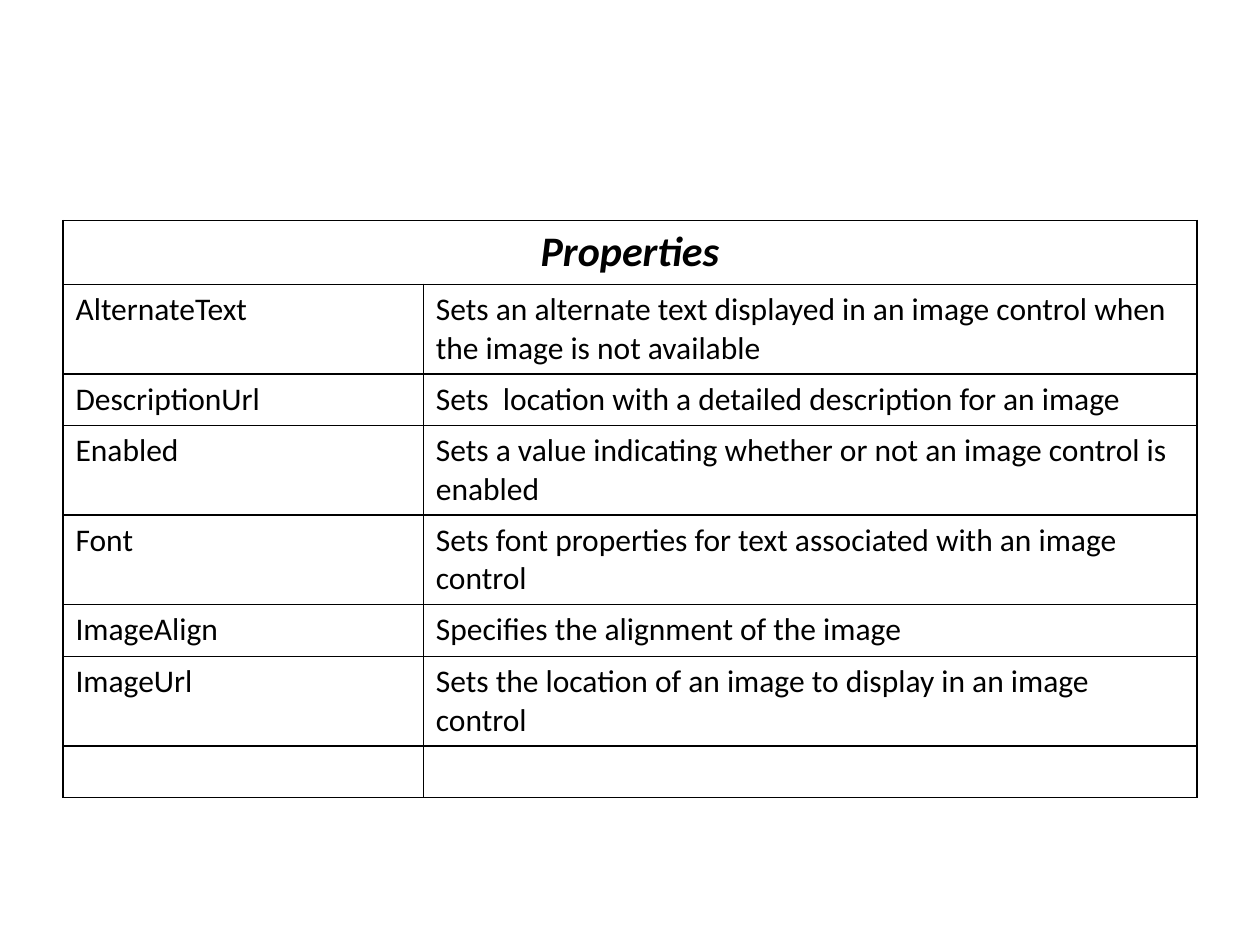
"""Build a slide with a table of image control properties."""
from dataclasses import dataclass
from typing import NamedTuple

from lxml import etree
from pptx import Presentation
from pptx.dml.color import RGBColor
from pptx.enum.text import PP_ALIGN
from pptx.oxml.ns import qn
from pptx.util import Inches, Pt

LEFT, CENTER = PP_ALIGN.LEFT, PP_ALIGN.CENTER


@dataclass(frozen=True)
class Theme:
    """Colours, font and sizes of the slide."""
    font: str = "Calibri"
    ink: str = "000000"
    paper: str = "FFFFFF"
    heading_size: int = 24
    body_size: int = 18
    border_width: int = 1


class Property(NamedTuple):
    """A control property and its purpose."""
    name: str
    purpose: str


THEME = Theme()
SLIDE_WIDTH, SLIDE_HEIGHT = Inches(10), Inches(7.5)
MARGIN = Inches(0.5)
TABLE_TOP = Inches(1.75)
ROW_HEIGHT = Inches(0.41)
NAME_WIDTH = Inches(2.86)
HEADING = "Properties"
PROPERTIES = [
    Property("AlternateText", "Sets an alternate text displayed in an image control when the image is not available"),
    Property("DescriptionUrl", "Sets  location with a detailed description for an image"),
    Property("Enabled", "Sets a value indicating whether or not an image control is enabled"),
    Property("Font", "Sets font properties for text associated with an image control"),
    Property("ImageAlign", "Specifies the alignment of the image"),
    Property("ImageUrl", "Sets the location of an image to display in an image control"),
    Property("", ""),
]


def style_cell(cell) -> None:
    """Give a cell four solid borders and a plain fill."""
    properties = cell._tc.get_or_add_tcPr()
    for side in ("lnL", "lnR", "lnT", "lnB"):
        line = etree.SubElement(properties, qn(f"a:{side}"), w=str(Pt(THEME.border_width)))
        fill = etree.SubElement(line, qn("a:solidFill"))
        etree.SubElement(fill, qn("a:srgbClr"), val=THEME.ink)
    cell.fill.solid()
    cell.fill.fore_color.rgb = RGBColor.from_string(THEME.paper)


def write_cell(cell, text: str, heading: bool = False) -> None:
    """Write formatted text into a cell."""
    cell.text_frame.text = text
    paragraph = cell.text_frame.paragraphs[0]
    paragraph.alignment = CENTER if heading else LEFT
    font = paragraph.font
    if paragraph.runs:
        font = paragraph.runs[0].font
    font.name = THEME.font
    font.size = Pt(THEME.heading_size if heading else THEME.body_size)
    font.bold = font.italic = heading
    font.color.rgb = RGBColor.from_string(THEME.ink)


def add_property_table(page, properties: list[Property]) -> None:
    """Add the table with a merged heading and one row per property."""
    row_count = len(properties) + 1
    width = SLIDE_WIDTH - 2 * MARGIN
    table = page.shapes.add_table(
        row_count, 2, MARGIN, TABLE_TOP, width, ROW_HEIGHT * row_count
    ).table
    table.first_row = table.horz_banding = False
    table.columns[0].width = NAME_WIDTH
    table.columns[1].width = width - NAME_WIDTH
    for cell in table.iter_cells():
        style_cell(cell)
    table.cell(0, 0).merge(table.cell(0, 1))
    write_cell(table.cell(0, 0), HEADING, heading=True)
    for row, entry in enumerate(properties, start=1):
        for column, text in enumerate(entry):
            write_cell(table.cell(row, column), text)


def main() -> None:
    """Create and save the deck."""
    deck = Presentation()
    deck.slide_width, deck.slide_height = SLIDE_WIDTH, SLIDE_HEIGHT
    page = deck.slides.add_slide(deck.slide_layouts.get_by_name("Blank"))
    add_property_table(page, PROPERTIES)
    deck.save("out.pptx")


if __name__ == "__main__":
    main()
